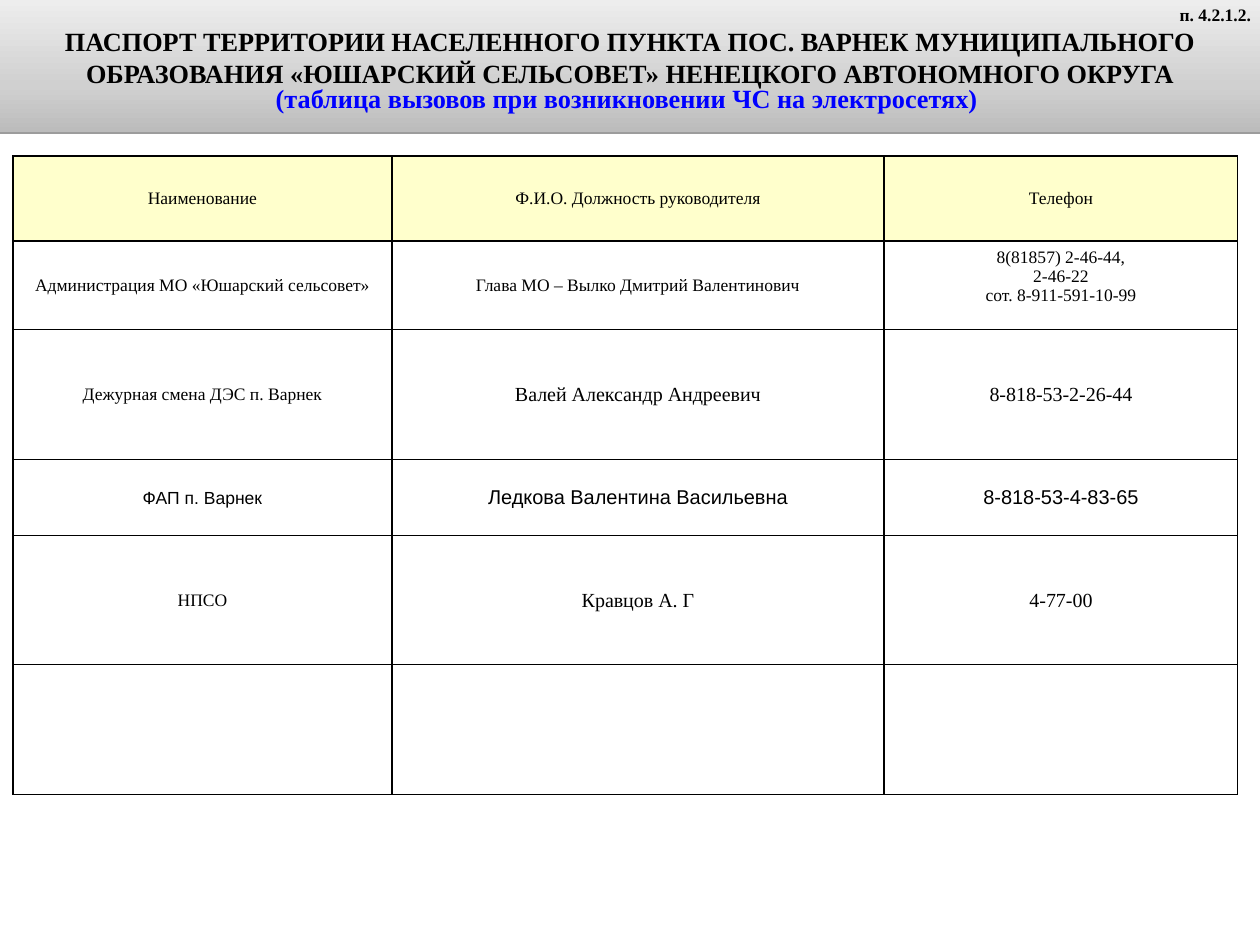
from copy import deepcopy

from lxml.etree import SubElement
from pptx import Presentation
from pptx.dml.color import RGBColor
from pptx.enum.shapes import MSO_SHAPE
from pptx.enum.text import MSO_ANCHOR, MSO_AUTO_SIZE, PP_ALIGN
from pptx.oxml.ns import qn
from pptx.util import Emu, Pt

EMU_PER_PX = 10160
SERIF = "Times New Roman"
SANS = "Arial"

BANNER_STOPS = [(0, "BCBCBC"), (0.35, "D0D0D0"), (1, "EDEDED")]
COLUMN_WIDTHS = [379, 492, 354]
ROW_HEIGHTS = [85, 89, 130, 76, 129, 130]
HEADER = ["Наименование", "Ф.И.О. Должность руководителя", "Телефон"]
CONTACTS = [
    ["Администрация МО «Юшарский сельсовет»", "Глава МО – Вылко Дмитрий Валентинович",
     "8(81857) 2-46-44,\n2-46-22\nсот. 8-911-591-10-99"],
    ["Дежурная смена ДЭС п. Варнек", "Валей Александр Андреевич", "8-818-53-2-26-44"],
    ["ФАП п. Варнек", "Ледкова Валентина Васильевна", "8-818-53-4-83-65"],
    ["НПСО", "Кравцов А. Г", "4-77-00"],
    ["", "", ""],
]
ROW_FONTS = [SERIF, SERIF, SERIF, SANS, SERIF, SERIF]
LARGE_TEXT_FROM_ROW = 2


def px(length):
    return Emu(length * EMU_PER_PX)


def color(value):
    return RGBColor.from_string(value)


def set_attributes(target, values):
    for name, value in values.items():
        setattr(target, name, value)


def margins(left, top, right, bottom):
    return {"margin_left": px(left), "margin_top": px(top),
            "margin_right": px(right), "margin_bottom": px(bottom)}


def format_paragraph(paragraph, size, font=SERIF, bold=False, fill="000000",
                     alignment=PP_ALIGN.CENTER):
    paragraph.alignment = alignment
    set_attributes(paragraph.font, {"size": Pt(size), "name": font, "bold": bold})
    paragraph.font.color.rgb = color(fill)


def fill_gradient(shape, stops):
    shape.fill.gradient()
    shape.fill.gradient_angle = 90
    first_stop = shape.fill._fill._gradFill.gsLst[0]
    first_stop.addnext(deepcopy(first_stop))
    for stop, (position, value) in zip(shape.fill.gradient_stops, stops):
        stop.position = position
        stop.color.rgb = color(value)


def add_drop_shadow(shape):
    shape.shadow.inherit = False
    effects = shape._element.spPr.find(qn("a:effectLst"))
    shadow = SubElement(effects, qn("a:outerShdw"), blurRad="0", dist=str(Pt(1.6)),
                        dir="5400000", rotWithShape="0")
    shadow_color = SubElement(shadow, qn("a:srgbClr"), val="000000")
    SubElement(shadow_color, qn("a:alpha"), val="38000")


def add_banner(slide):
    banner = slide.shapes.add_shape(MSO_SHAPE.RECTANGLE, 0, 0, px(1260), px(132))
    fill_gradient(banner, BANNER_STOPS)
    banner.line.fill.background()
    add_drop_shadow(banner)
    frame = banner.text_frame
    set_attributes(frame, {"word_wrap": True, "vertical_anchor": MSO_ANCHOR.MIDDLE,
                           **margins(9, 11, 9, 4)})
    title = frame.paragraphs[0]
    title.text = ("ПАСПОРТ ТЕРРИТОРИИ НАСЕЛЕННОГО ПУНКТА ПОС. ВАРНЕК МУНИЦИПАЛЬНОГО "
                  "ОБРАЗОВАНИЯ «ЮШАРСКИЙ СЕЛЬСОВЕТ» НЕНЕЦКОГО АВТОНОМНОГО ОКРУГА")
    format_paragraph(title, 21, bold=True)
    subtitle = frame.add_paragraph()
    subtitle.text = "(таблица вызовов при возникновении ЧС на электросетях) "
    subtitle.line_spacing = 0.8
    format_paragraph(subtitle, 21, bold=True, fill="0000FF")


def add_cell_borders(cell):
    properties = cell._tc.get_or_add_tcPr()
    for index, side in enumerate(("a:lnL", "a:lnR", "a:lnT", "a:lnB")):
        line = properties.makeelement(qn(side), {"w": str(Pt(1))})
        solid = SubElement(line, qn("a:solidFill"))
        SubElement(solid, qn("a:srgbClr"), val="000000")
        properties.insert(index, line)


def fill_cell(cell, text, size, font, fill, insets):
    cell.text = text
    set_attributes(cell, {"vertical_anchor": MSO_ANCHOR.MIDDLE, **insets})
    cell.fill.solid()
    cell.fill.fore_color.rgb = color(fill)
    add_cell_borders(cell)
    for paragraph in cell.text_frame.paragraphs:
        format_paragraph(paragraph, size, font)


def add_contact_table(slide):
    rows = [HEADER, *CONTACTS]
    table = slide.shapes.add_table(len(rows), len(HEADER), px(13), px(156),
                                   px(sum(COLUMN_WIDTHS)), px(sum(ROW_HEIGHTS))).table
    for column, width in zip(table.columns, COLUMN_WIDTHS):
        column.width = px(width)
    for row, height in zip(table.rows, ROW_HEIGHTS):
        row.height = px(height)
    for row_index, texts in enumerate(rows):
        fill = "FFFFCC" if row_index == 0 else "FFFFFF"
        for column_index, text in enumerate(texts):
            large = row_index >= LARGE_TEXT_FROM_ROW and column_index > 0
            bottom = 21 if "\n" in text else 3
            insets = margins(6, 0, 6, 0) if large else margins(3, 3, 3, bottom)
            fill_cell(table.cell(row_index, column_index), text, 16 if large else 14,
                      ROW_FONTS[row_index], fill, insets)


def add_section_number(slide):
    frame = slide.shapes.add_textbox(px(1162), 0, px(98), px(30)).text_frame
    set_attributes(frame, {"word_wrap": True, "auto_size": MSO_AUTO_SIZE.SHAPE_TO_FIT_TEXT})
    paragraph = frame.paragraphs[0]
    paragraph.text = "п. 4.2.1.2."
    format_paragraph(paragraph, 14, bold=True, alignment=PP_ALIGN.RIGHT)


def main():
    presentation = Presentation()
    set_attributes(presentation, {"slide_width": px(1260), "slide_height": px(945)})
    slide = presentation.slides.add_slide(presentation.slide_layouts[6])
    add_banner(slide)
    add_contact_table(slide)
    add_section_number(slide)
    presentation.save("out.pptx")


if __name__ == "__main__":
    main()
